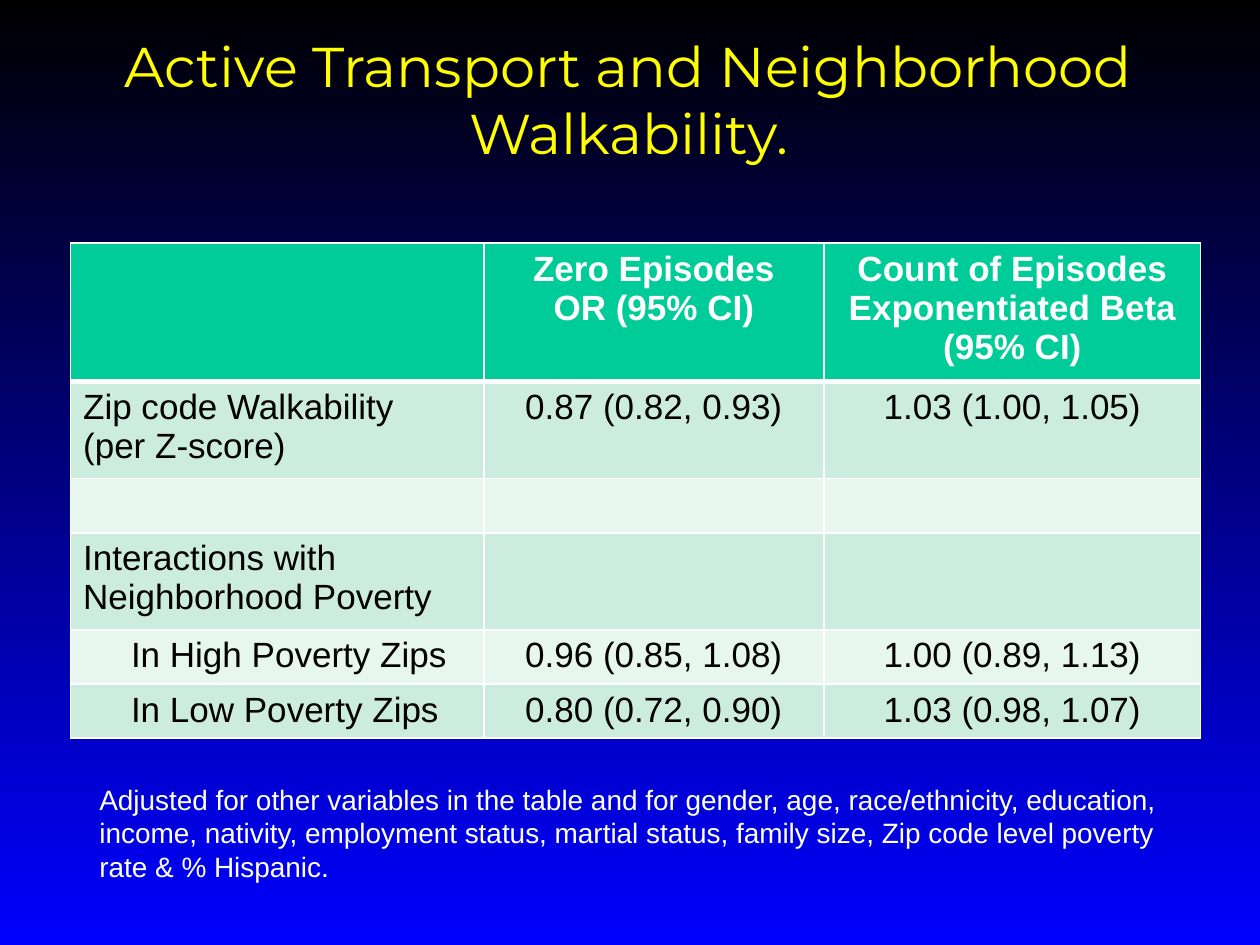
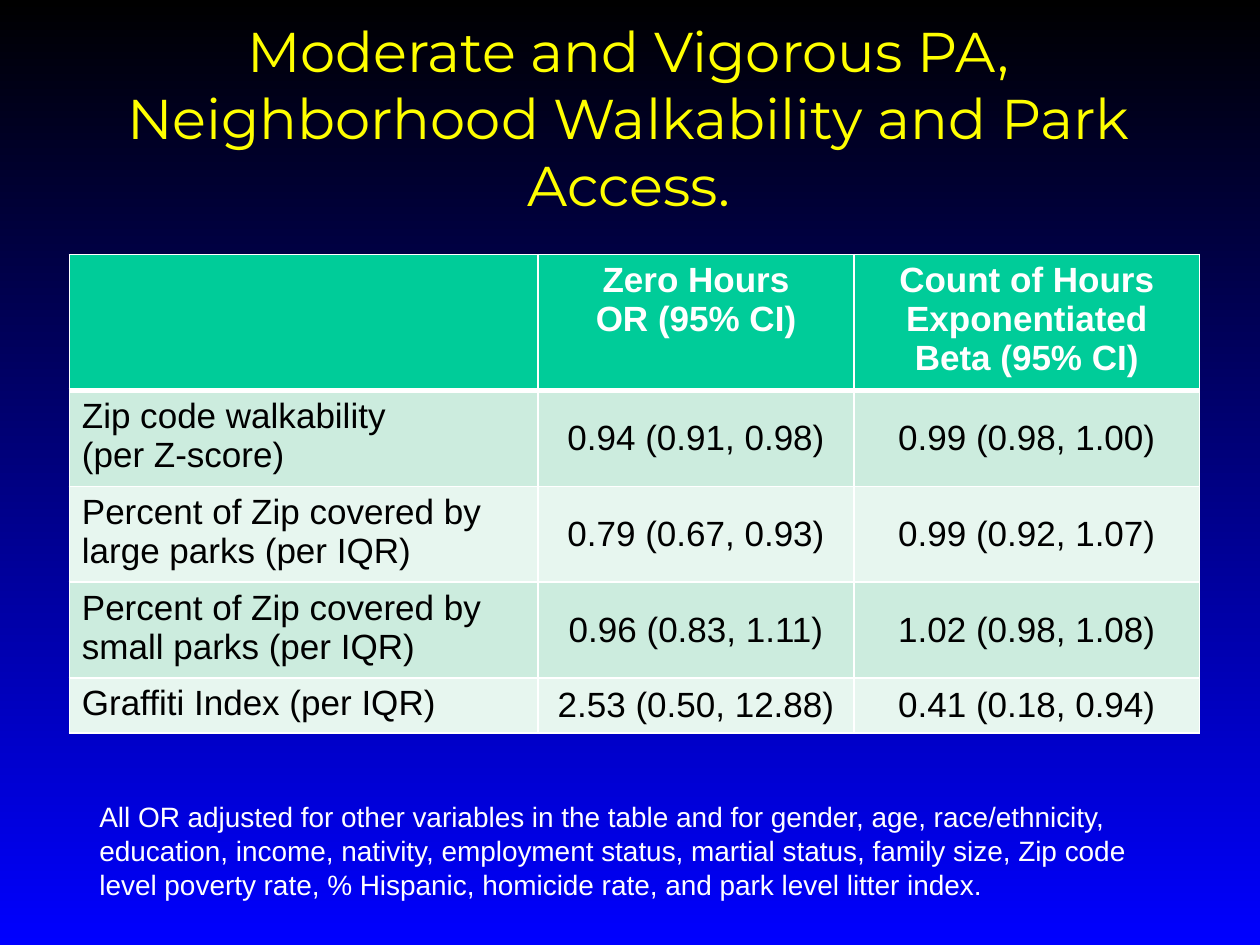
from lxml import etree
from pptx import Presentation
from pptx.dml.color import RGBColor
from pptx.enum.text import MSO_ANCHOR, MSO_AUTO_SIZE, PP_ALIGN
from pptx.oxml.ns import qn
from pptx.util import Inches, Pt

CENTER, LEFT = PP_ALIGN.CENTER, PP_ALIGN.LEFT
TOP, MIDDLE = MSO_ANCHOR.TOP, MSO_ANCHOR.MIDDLE
NO_FIT = MSO_AUTO_SIZE.NONE
TITLE_ONLY = 5

COLORS = {
    "sky": "000000", "ground": "0000FF", "title": "FFFF00", "light": "FFFFFF",
    "dark": "000000", "header": "00CC99", "odd": "CCECDE", "even": "E7F6EF",
}
TITLE_FONT, BODY_FONT = "Montserrat", "Arial"

SLIDES = [
    {
        "title": "Active Transport and Neighborhood Walkability.",
        "title_at": (0.44, 0.19, 9.1, 1.18),
        "table_at": (0.56, 1.93),
        "columns": (3.28, 2.7, 2.99),
        "heights": (1.1, 0.77, 0.43, 0.77, 0.43, 0.43),
        "anchor": TOP,
        "indented": (4, 5),
        "rows": [
            ("", "Zero Episodes\nOR (95% CI)", "Count of Episodes\nExponentiated Beta (95% CI)"),
            ("Zip code Walkability\n(per Z-score)", "0.87 (0.82, 0.93)", "1.03 (1.00, 1.05)"),
            ("", "", ""),
            ("Interactions with Neighborhood Poverty", "", ""),
            ("In High Poverty Zips", "0.96 (0.85, 1.08)", "1.00 (0.89, 1.13)"),
            ("In Low Poverty Zips", "0.80 (0.72, 0.90)", "1.03 (0.98, 1.07)"),
        ],
        "note": "Adjusted for other variables in the table and for gender, age, race/ethnicity, "
                "education, income, nativity, employment status, martial status, family size, "
                "Zip code level poverty rate & % Hispanic.",
        "note_top": 6.16,
    },
    {
        "title": "Moderate and Vigorous PA, Neighborhood Walkability and Park Access.",
        "title_at": (0.3, 0.07, 9.38, 1.72),
        "table_at": (0.55, 2.02),
        "columns": (3.72, 2.51, 2.74),
        "heights": (1.08, 0.76, 0.76, 0.76, 0.44),
        "anchor": MIDDLE,
        "indented": (),
        "rows": [
            ("", "Zero Hours\nOR (95% CI)", "Count of Hours\nExponentiated Beta (95% CI)"),
            ("Zip code walkability\n(per Z-score)", "0.94 (0.91, 0.98)", "0.99 (0.98, 1.00)"),
            ("Percent of Zip covered by\nlarge parks (per IQR)", "0.79 (0.67, 0.93)", "0.99 (0.92, 1.07)"),
            ("Percent of Zip covered by small parks (per IQR)", "0.96 (0.83, 1.11)", "1.02 (0.98, 1.08)"),
            ("Graffiti Index (per IQR)", "2.53 (0.50, 12.88)", "0.41 (0.18, 0.94)"),
        ],
        "note": "All OR adjusted for other variables in the table and for gender, age, "
                "race/ethnicity, education, income, nativity, employment status, martial status, "
                "family size, Zip code level poverty rate, % Hispanic, homicide rate, and park "
                "level litter index.",
        "note_top": 6.3,
    },
]


def rgb(name):
    return RGBColor.from_string(COLORS[name])


def style_text(frame, font, size, color, align, bold=False):
    for para in frame.paragraphs:
        para.alignment = align
        para.font.name = font
        para.font.size = Pt(size)
        para.font.bold = bold
        para.font.color.rgb = rgb(color)


def paint_background(master):
    fill = master.background.fill
    fill.gradient()
    fill.gradient_angle = 270
    for stop, name in zip(fill.gradient_stops, ("sky", "ground")):
        stop.color.rgb = rgb(name)


def set_borders(cell, widths):
    properties = cell._tc.get_or_add_tcPr()
    for index, (side, width) in enumerate(widths.items()):
        line = etree.Element(qn(f"a:ln{side}"), w=str(Pt(width)))
        fill = etree.SubElement(line, qn("a:solidFill"))
        etree.SubElement(fill, qn("a:srgbClr"), val=COLORS["light"])
        properties.insert(index, line)


def add_title(page, text, place):
    title = page.shapes.title
    title.left, title.top, title.width, title.height = map(Inches, place)
    frame = title.text_frame
    frame.text = text
    frame.word_wrap = True
    frame.auto_size = NO_FIT
    frame.vertical_anchor = MIDDLE
    style_text(frame, TITLE_FONT, 32, "title", CENTER)


def fill_cell(cell, text, row, column, content):
    is_header = row == 0
    cell.text = text
    cell.vertical_anchor = content["anchor"] if row and column else TOP
    cell.fill.solid()
    cell.fill.fore_color.rgb = rgb("header" if is_header else "odd" if row % 2 else "even")
    style_text(cell.text_frame, BODY_FONT, 20, "light" if is_header else "dark",
               CENTER if column else LEFT, is_header)
    if column == 0 and row in content["indented"]:
        cell.margin_left = Inches(0.1 + 0.38)
    set_borders(cell, {"L": 1, "R": 1, "T": 3 if row == 1 else 1, "B": 3 if is_header else 1})


def add_results(page, content):
    rows, columns, heights = content["rows"], content["columns"], content["heights"]
    size = (sum(columns), sum(heights))
    table = page.shapes.add_table(len(rows), len(columns),
                                  *map(Inches, content["table_at"] + size)).table
    for column, width in zip(table.columns, columns):
        column.width = Inches(width)
    for row, height in zip(table.rows, heights):
        row.height = Inches(height)
    for row, texts in enumerate(rows):
        for column, text in enumerate(texts):
            fill_cell(table.cell(row, column), text, row, column, content)


def add_note(page, text, top):
    box = page.shapes.add_textbox(*map(Inches, (0.69, top, 8.61, 0.91)))
    box.text_frame.word_wrap = True
    box.text_frame.text = text
    style_text(box.text_frame, BODY_FONT, 16, "light", LEFT)


def main():
    deck = Presentation()
    deck.slide_width, deck.slide_height = Inches(10), Inches(7.5)
    paint_background(deck.slide_master)
    for content in SLIDES:
        page = deck.slides.add_slide(deck.slide_layouts[TITLE_ONLY])
        add_title(page, content["title"], content["title_at"])
        add_results(page, content)
        add_note(page, content["note"], content["note_top"])
    deck.save("out.pptx")


if __name__ == "__main__":
    main()
